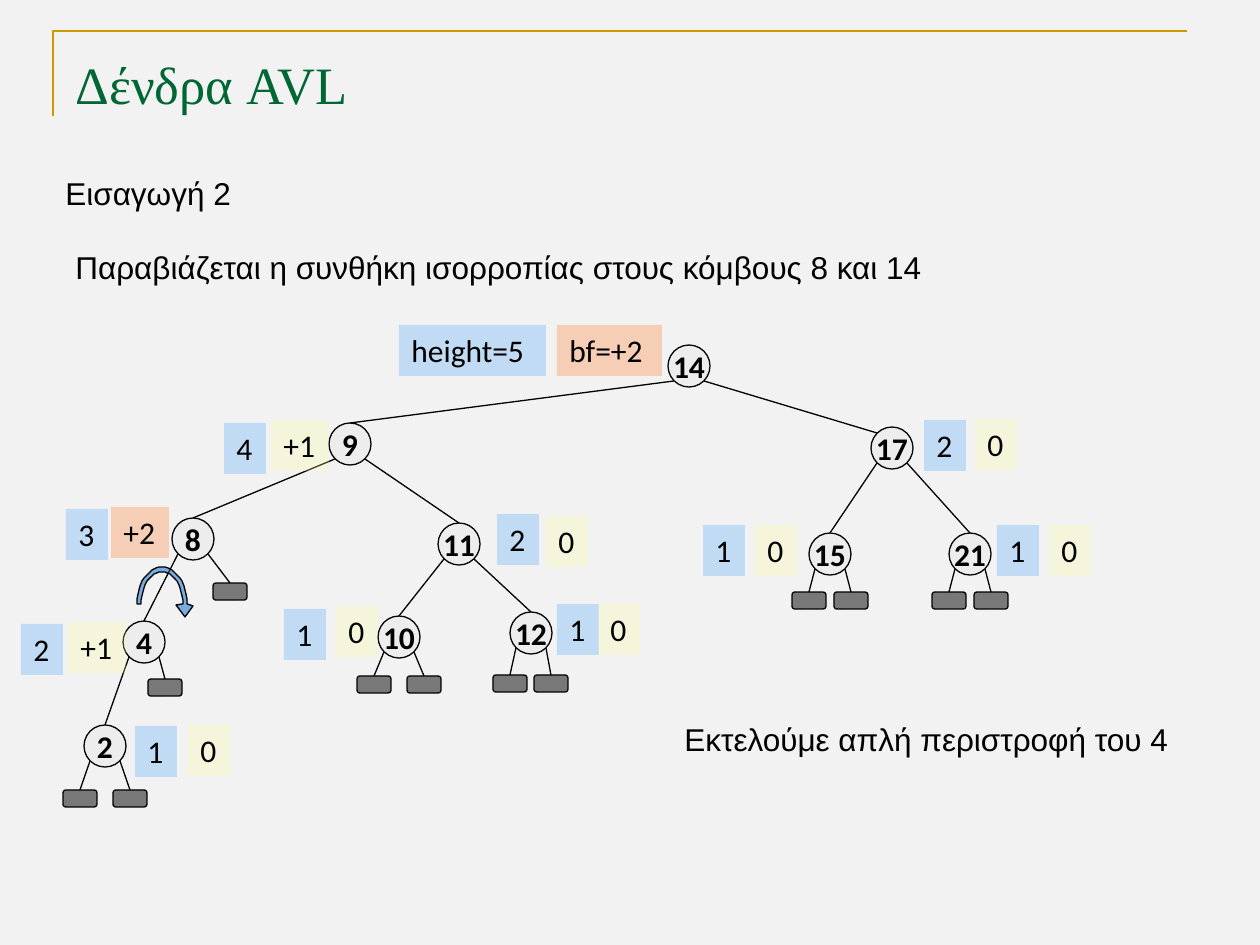
from dataclasses import dataclass
from math import cos, pi, sin
from typing import Optional

from lxml.etree import SubElement
from pptx import Presentation
from pptx.dml.color import RGBColor
from pptx.enum.shapes import MSO_CONNECTOR as Connector, MSO_SHAPE as Preset
from pptx.enum.text import MSO_ANCHOR as Anchor, MSO_AUTO_SIZE as AutoSize, PP_ALIGN as Align
from pptx.oxml.ns import qn
from pptx.util import Emu, Pt

SCALE = 914400 / 126
NODE_SIZE, CORNER = 42, 15
LEAF_WIDTH, LEAF_HEIGHT = 34, 17
TAG_HEIGHT = 51


@dataclass(frozen=True)
class Theme:
    background: str = "F2F2F2"
    frame: str = "CC9900"
    title: str = "006633"
    ink: str = "000000"
    node: str = "EAEAEA"
    height: str = "3399FF"
    balanced: str = "FFFF99"
    violated: str = "FF6600"
    rotation: str = "0066CC"
    title_font: str = "Times New Roman"
    body_font: str = "Arial"
    tree_font: str = "Calibri"
    title_size: int = 30
    body_size: int = 18
    thin: float = 0.75
    thick: float = 1.5


@dataclass(frozen=True)
class Tag:
    text: str
    x: int
    y: int
    width: int = 42


@dataclass(frozen=True)
class Node:
    key: int
    x: int
    y: int
    parent: Optional[int]
    height: Tag
    balance: Tag
    leaves: tuple = ()

    @property
    def center(self) -> int:
        return self.x + NODE_SIZE // 2

    def foot(self, target: int) -> tuple:
        side = CORNER if target > self.center else -CORNER
        return self.center + side, self.y + NODE_SIZE // 2 + CORNER


@dataclass(frozen=True)
class Caption:
    text: str
    x: int
    y: int
    width: int


THEME = Theme()
NODES = (
    Node(14, 668, 345, None, Tag("height=5", 399, 325, 147), Tag("bf=+2", 557, 325, 105)),
    Node(9, 329, 423, 14, Tag("4", 224, 423), Tag("+1", 271, 420, 58)),
    Node(17, 871, 427, 14, Tag("2", 924, 420), Tag("0", 975, 419)),
    Node(8, 172, 518, 9, Tag("3", 66, 509), Tag("+2", 111, 507, 58), ((213, 583),)),
    Node(11, 438, 523, 9, Tag("2", 497, 514), Tag("0", 546, 516)),
    Node(15, 809, 533, 17, Tag("1", 703, 525), Tag("0", 755, 525), ((792, 592), (834, 592))),
    Node(21, 949, 533, 17, Tag("1", 997, 525), Tag("0", 1049, 525), ((932, 592), (974, 592))),
    Node(4, 123, 621, 8, Tag("2", 21, 624), Tag("+1", 68, 622, 58), ((148, 679),)),
    Node(10, 378, 616, 11, Tag("1", 284, 609), Tag("0", 336, 606), ((357, 676), (407, 676))),
    Node(12, 510, 612, 11, Tag("1", 557, 604), Tag("0", 598, 604), ((493, 675), (534, 675))),
    Node(2, 84, 725, 4, Tag("1", 135, 726), Tag("0", 188, 725), ((63, 790), (113, 790))),
)
CAPTIONS = (
    Caption("Εισαγωγή 2", 53, 168, 193),
    Caption("Παραβιάζεται η συνθήκη ισορροπίας στους κόμβους 8 και 14", 63, 242, 903),
    Caption("Εκτελούμε απλή περιστροφή του 4", 672, 714, 514),
)


def px(length: int) -> Emu:
    return Emu(round(length * SCALE))


def paint(shape, color: str, opacity: int, outlined: bool = True) -> None:
    shape.shadow.inherit = False
    shape.fill.solid()
    shape.fill.fore_color.rgb = RGBColor.from_string(color)
    tint = shape.fill._xPr.find(qn("a:solidFill"))[0]
    SubElement(tint, qn("a:alpha")).set("val", str(opacity * 1000))
    if outlined:
        stroke(shape.line, THEME.ink, THEME.thin)
    else:
        shape.line.fill.background()


def stroke(line, color: str, width: float) -> None:
    line.color.rgb = RGBColor.from_string(color)
    line.width = Pt(width)


def write(shape, text: str, font: str, size: int, color: str = THEME.ink,
          bold: bool = False, align: Align = Align.LEFT, wrap: bool = False) -> None:
    frame = shape.text_frame
    frame.word_wrap = wrap
    para = frame.paragraphs[0]
    para.alignment = align
    span = para.add_run()
    span.text = text
    span.font.name, span.font.size, span.font.bold = font, Pt(size), bold
    span.font.color.rgb = RGBColor.from_string(color)


def add_preset(page, preset: Preset, x: int, y: int, width: int, height: int):
    return page.shapes.add_shape(preset, px(x), px(y), px(width), px(height))


def add_edge(page, start: tuple, end: tuple) -> None:
    edge = page.shapes.add_connector(Connector.STRAIGHT, *map(px, start + end))
    stroke(edge.line, THEME.ink, THEME.thin)
    SubElement(edge._element.spPr, qn("a:effectLst"))


def add_leaf(page, node: Node, x: int, y: int) -> None:
    leaf = add_preset(page, Preset.ROUNDED_RECTANGLE, x, y, LEAF_WIDTH, LEAF_HEIGHT)
    paint(leaf, THEME.ink, 50)
    top = x + LEAF_WIDTH // 2
    add_edge(page, (top, y), node.foot(top))


def add_node(page, node: Node) -> None:
    circle = add_preset(page, Preset.OVAL, node.x, node.y, NODE_SIZE, NODE_SIZE)
    paint(circle, THEME.node, 60)
    circle.text_frame.vertical_anchor = Anchor.MIDDLE
    write(circle, str(node.key), THEME.tree_font, THEME.body_size, bold=True, align=Align.CENTER)


def add_tag(page, tag: Tag, color: str) -> None:
    box = add_preset(page, Preset.RECTANGLE, tag.x, tag.y, tag.width, TAG_HEIGHT)
    paint(box, color, 25, outlined=False)
    box.text_frame.vertical_anchor = Anchor.TOP
    write(box, tag.text, THEME.tree_font, THEME.body_size, wrap=len(tag.text) > 2)
    box.text_frame.auto_size = AutoSize.SHAPE_TO_FIT_TEXT


def add_outline(page, points: list, close: bool):
    builder = page.shapes.build_freeform(*points[0], scale=SCALE)
    builder.add_line_segments(points[1:], close=close)
    return builder.convert_to_shape()


def add_rotation(page) -> None:
    def arc(width: int, height: int) -> list:
        angles = [pi - pi * step / 24 for step in range(25)]
        return [(162 + width * cos(angle), 604 - height * sin(angle)) for angle in angles]

    head = [(193, 606), (185, 617), (176, 605)]
    paint(add_outline(page, arc(25, 37) + head + arc(21, 32)[::-1], True), THEME.rotation, 50)


def add_title(page, text: str) -> None:
    frame = add_outline(page, [(53, 116), (53, 31), (1187, 31)], False)
    frame.shadow.inherit = False
    frame.fill.background()
    stroke(frame.line, THEME.frame, THEME.thick)
    box = page.shapes.add_textbox(px(63), px(38), px(1134), px(67))
    box.text_frame.margin_top = px(14)
    box.text_frame.margin_bottom = 0
    write(box, text, THEME.title_font, THEME.title_size, THEME.title, wrap=True)


def add_caption(page, caption: Caption) -> None:
    box = page.shapes.add_textbox(px(caption.x), px(caption.y), px(caption.width), px(TAG_HEIGHT))
    write(box, caption.text, THEME.body_font, THEME.body_size)
    box.text_frame.auto_size = AutoSize.SHAPE_TO_FIT_TEXT


def add_tree(page) -> None:
    by_key = {node.key: node for node in NODES}
    for node in NODES:
        if node.parent is not None:
            end = (877, 433) if node.key == 17 else (node.center, node.y)
            add_edge(page, by_key[node.parent].foot(node.center), end)
        for leaf in node.leaves:
            add_leaf(page, node, *leaf)
        add_node(page, node)
    for node in NODES:
        add_tag(page, node.height, THEME.height)
        violated = node.balance.text.endswith("+2")
        add_tag(page, node.balance, THEME.violated if violated else THEME.balanced)


def main() -> None:
    deck = Presentation()
    deck.slide_width, deck.slide_height = px(1260), px(945)
    page = deck.slides.add_slide(deck.slide_layouts[6])
    page.background.fill.solid()
    page.background.fill.fore_color.rgb = RGBColor.from_string(THEME.background)
    add_title(page, "Δένδρα AVL")
    add_tree(page)
    for caption in CAPTIONS:
        add_caption(page, caption)
    add_rotation(page)
    deck.save("out.pptx")


if __name__ == "__main__":
    main()
